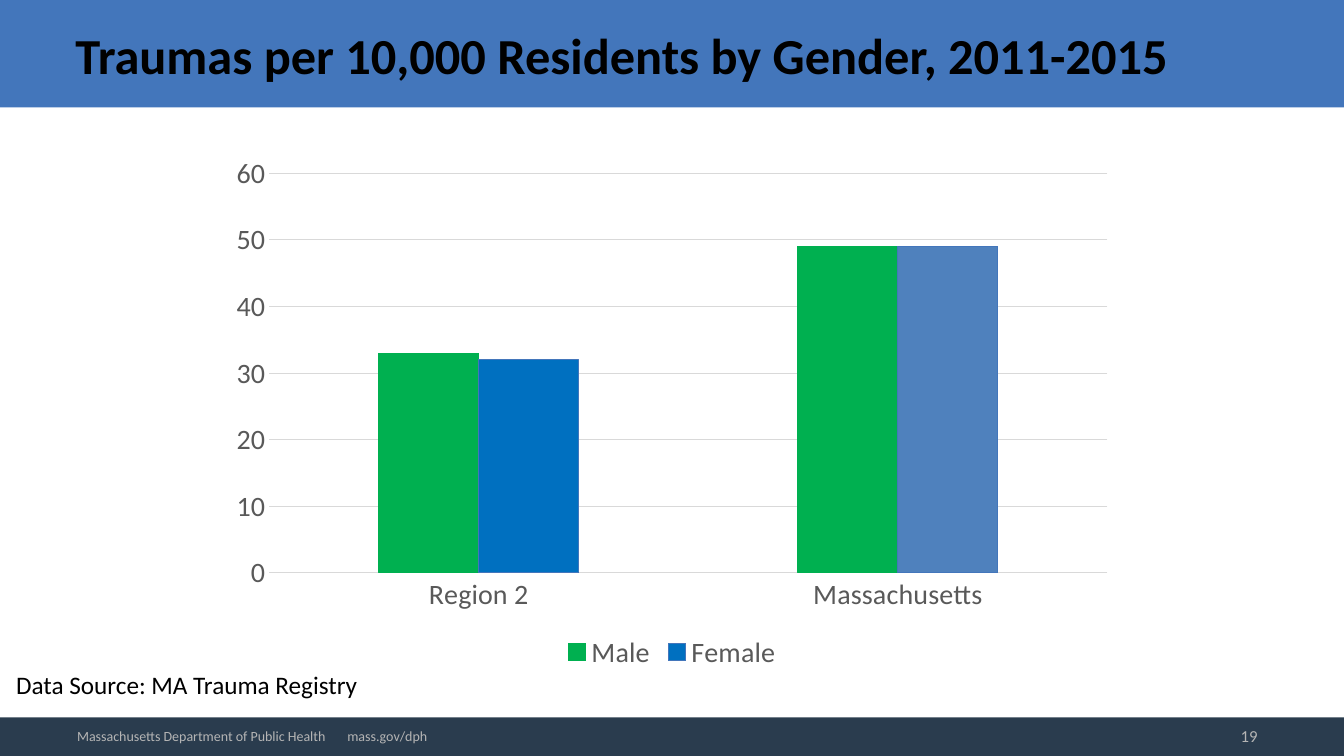
from pptx import Presentation
from pptx.chart.data import CategoryChartData
from pptx.dml.color import RGBColor
from pptx.enum.chart import XL_CHART_TYPE, XL_LEGEND_POSITION, XL_TICK_MARK
from pptx.enum.shapes import MSO_SHAPE
from pptx.enum.text import MSO_ANCHOR, PP_ALIGN
from pptx.oxml import parse_xml
from pptx.oxml.ns import nsdecls
from pptx.util import Inches, Pt

THEME = {
    "font": "Calibri",
    "band": "4376BB", "footer": "2A3C4E", "ink": "000000",
    "muted": "B5B5B5", "axis": "595959", "grid": "D9D9D9",
    "male": "00B050", "female": "0070C0", "female_state": "4F81BD",
    "title_size": 36, "chart_size": 20, "source_size": 18,
    "number_size": 12, "footer_size": 10, "hairline": 0.75,
}
COLUMNS, ROWS = 160, 90

deck = Presentation()
deck.slide_width, deck.slide_height = Inches(13.33), Inches(7.5)
slide = deck.slides.add_slide(deck.slide_layouts[6])


def cells(left, top, width, height):
    """Turn grid columns and rows into slide lengths."""
    column, row = deck.slide_width / COLUMNS, deck.slide_height / ROWS
    return [int(n) for n in (left * column, top * row, width * column, height * row)]


def style_font(font, size, color, bold=False):
    values = {"name": THEME["font"], "size": Pt(THEME[size]), "bold": bold}
    for attribute, value in values.items():
        setattr(font, attribute, value)
    font.color.rgb = RGBColor.from_string(THEME[color])


# Header and footer bands
for top, height, color in [(0, 12.8, "band"), (85.4, 4.6, "footer")]:
    band = slide.shapes.add_shape(MSO_SHAPE.RECTANGLE, *cells(0, top, COLUMNS, height))
    band.shadow.inherit = False
    band.fill.solid()
    band.fill.fore_color.rgb = RGBColor.from_string(THEME[color])
    band.line.fill.background()

# Chart of trauma rates
rates = CategoryChartData()
rates.categories = ["Region 2", "Massachusetts"]
rates.add_series("Male", [33, 49])
rates.add_series("Female", [32, 49])
rate_chart = slide.shapes.add_chart(
    XL_CHART_TYPE.COLUMN_CLUSTERED, *cells(26, 17.3, 108, 63.1), rates).chart
style_font(rate_chart.font, "chart_size", "axis")

chart_format = {"has_title": False, "has_legend": True}
legend_format = {"position": XL_LEGEND_POSITION.BOTTOM, "include_in_layout": False}
bars_format = {"gap_width": 219, "overlap": 0, "vary_by_categories": False}
tick_format = {"major_tick_mark": XL_TICK_MARK.NONE, "minor_tick_mark": XL_TICK_MARK.NONE}
scale_format = {"minimum_scale": 0, "maximum_scale": 60, "major_unit": 10,
                "has_major_gridlines": True}
gender_bars = rate_chart.plots[0]
region_axis, rate_axis = rate_chart.category_axis, rate_chart.value_axis
for attribute, value in chart_format.items():
    setattr(rate_chart, attribute, value)
for part, values in [(rate_chart.legend, legend_format), (gender_bars, bars_format),
                     (region_axis, tick_format), (rate_axis, tick_format | scale_format)]:
    for attribute, value in values.items():
        setattr(part, attribute, value)
for part in (rate_chart.legend, region_axis.tick_labels, rate_axis.tick_labels):
    style_font(part.font, "chart_size", "axis")

# Bar colours and hairlines
male, female = gender_bars.series
for part, color in [(male, "male"), (female, "female"), (female.points[1], "female_state")]:
    part.format.fill.solid()
    part.format.fill.fore_color.rgb = RGBColor.from_string(THEME[color])
for line, color in [(male.format.line, "male"), (female.format.line, "band"),
                    (female.points[1].format.line, "band"),
                    (region_axis.format.line, "grid"),
                    (rate_axis.major_gridlines.format.line, "grid")]:
    line.color.rgb = RGBColor.from_string(THEME[color])
    line.width = Pt(THEME["hairline"])
rate_axis.format.line.fill.background()

# Title, data source, page number and footer
texts = [
    ("Traumas per 10,000 Residents by Gender, 2011-2015", (7.8, 0.72, 144, 11.5),
     "title_size", "ink", True, MSO_ANCHOR.MIDDLE, PP_ALIGN.LEFT),
    ("Data Source: MA Trauma Registry", (0.75, 79.1, 43.4, 4.8),
     "source_size", "ink", False, MSO_ANCHOR.TOP, PP_ALIGN.LEFT),
    ("19", (115, 85.2, 35.9, 4.8),
     "number_size", "muted", False, MSO_ANCHOR.MIDDLE, PP_ALIGN.RIGHT),
    ("Massachusetts Department of Public Health\tmass.gov/dph", (8, 85.4, 50, 4.4),
     "footer_size", "muted", False, MSO_ANCHOR.MIDDLE, PP_ALIGN.LEFT),
]
for wording, place, size, color, bold, anchor, alignment in texts:
    frame = slide.shapes.add_textbox(*cells(*place)).text_frame
    for attribute, value in {"word_wrap": True, "vertical_anchor": anchor}.items():
        setattr(frame, attribute, value)
    paragraph = frame.paragraphs[0]
    paragraph.alignment = alignment
    run = paragraph.add_run()
    run.text = wording
    style_font(run.font, size, color, bold)

# Tab stop between department and web address
paragraph._p.get_or_add_pPr().append(parse_xml(
    f'<a:tabLst {nsdecls("a")}><a:tab pos="{Inches(2.68)}" algn="l"/></a:tabLst>'))

deck.save("out.pptx")
